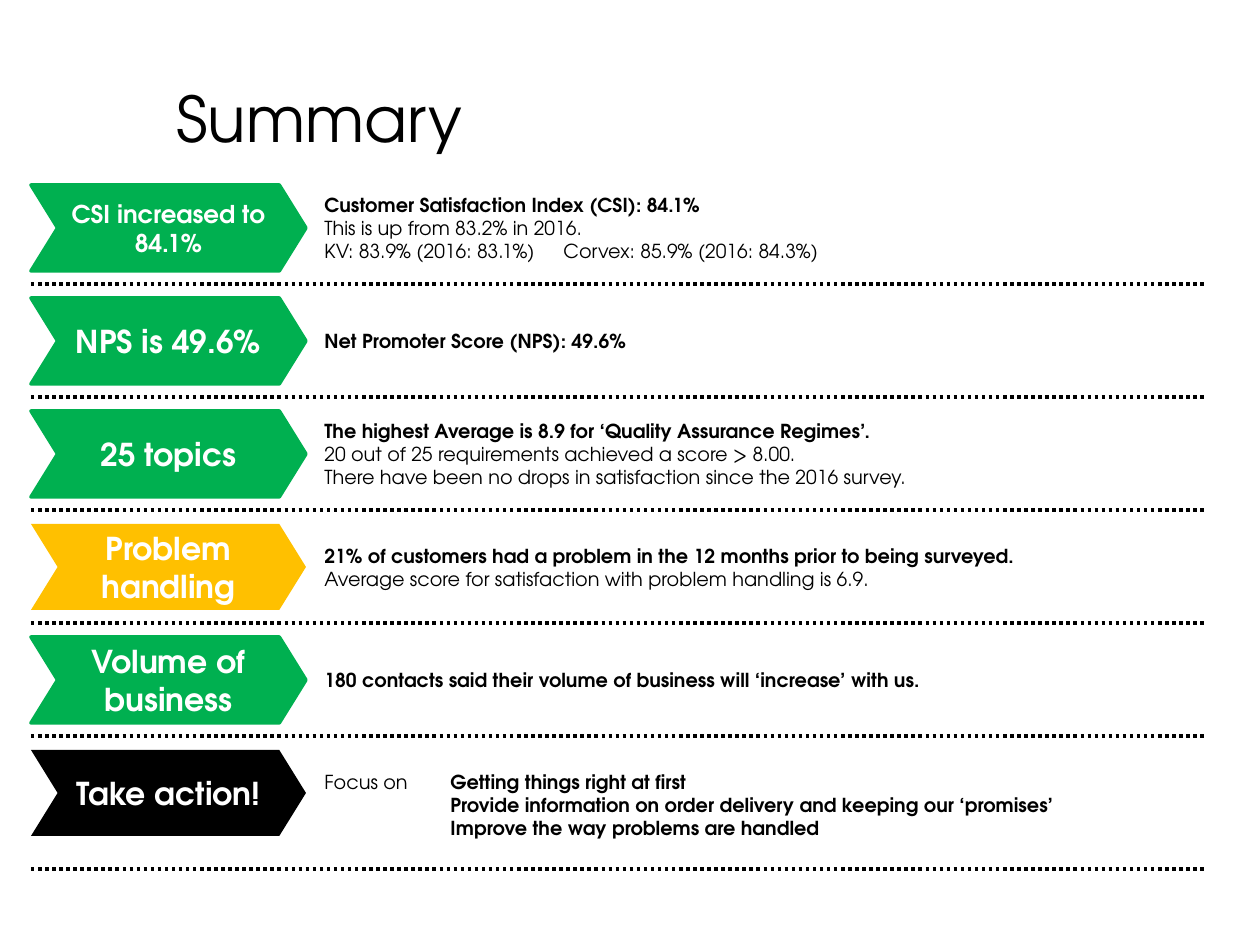
from lxml.etree import SubElement
from pptx import Presentation
from pptx.dml.color import RGBColor
from pptx.enum.dml import MSO_LINE as Dash
from pptx.enum.shapes import MSO_CONNECTOR as Conn, MSO_SHAPE as Kind
from pptx.enum.text import MSO_ANCHOR as Anchor, PP_ALIGN as Align
from pptx.oxml.ns import qn
from pptx.util import Pt

FONT = "TeX Gyre Adventor"
GREEN, AMBER, BLACK, WHITE = "00B050", "FFC000", "000000", "FFFFFF"
TOP, STEP, HIGH = 185, 113, 86
LEFT, RIGHT, BODY = 31, 1207, 312

# Label, label size, fill, text height, rule offset, tab stop, paragraphs of (text, bold) runs
ROWS = [
    ("CSI increased to 84.1%", 14, GREEN, HIGH, 99, 239, [
        [("Customer Satisfaction Index (CSI): 84.1%", True)],
        [("This is up from 83.2% in 2016.", False)],
        [("KV: 83.9% (2016: 83.1%)\tCorvex: 85.9% (2016: 84.3%)", False)]]),
    ("NPS is 49.6%", 18, GREEN, HIGH, 99, None, [
        [("Net Promoter Score (NPS): 49.6%", True)]]),
    ("25 topics", 18, GREEN, HIGH, 99, None, [
        [("The highest Average is 8.9 for ‘Quality Assurance Regimes’.", True)],
        [("20 out of 25 requirements achieved a score > 8.00.", False)],
        [("There have been no drops in satisfaction since the 2016 survey.", False)]]),
    ("Problem handling", 18, AMBER, HIGH, 99, None, [
        [("21% of customers had a problem in the 12 months prior to being surveyed.", True)],
        [("Average score for satisfaction with problem handling is 6.9.", False)]]),
    ("Volume of business", 18, GREEN, HIGH, 99, None, [
        [("180 contacts said their volume of business will ‘increase’ with us.", True)]]),
    ("Take action!", 18, BLACK, 110, 119, 126, [
        [("Focus on\t", False), ("Getting things right at first", True)],
        [("\tProvide information on order delivery and keeping our ‘promises’", True)],
        [("\tImprove the way problems are handled", True)]]),
]


def px(n):
    return round(n * 914400 / 126)


def color(code):
    return RGBColor.from_string(code)


def add_run(para, text, size, code, bold=False):
    run = para.add_run()
    run.text = text
    font = run.font
    font.name, font.size, font.bold = FONT, Pt(size), bold
    font.color.rgb = color(code)


def add_tab(para, stop):
    tabs = SubElement(para._p.get_or_add_pPr(), qn("a:tabLst"))
    SubElement(tabs, qn("a:tab"), pos=str(px(stop)), algn="l")


def add_title(slide, text):
    title = slide.shapes.title
    title.left, title.top, title.width, title.height = map(px, (164, 32, 1062, 123))
    frame = title.text_frame
    frame.vertical_anchor = Anchor.BOTTOM
    frame.margin_bottom = 0
    para = frame.paragraphs[0]
    para.alignment = Align.LEFT
    add_run(para, text, 36, BLACK)


def add_label(slide, top, text, size, fill):
    shape = slide.shapes.add_shape(Kind.CHEVRON, px(LEFT), px(top), px(275), px(HIGH))
    shape.adjustments[0] = 0.31
    shape.shadow.inherit = False
    shape.fill.solid()
    shape.fill.fore_color.rgb = color(fill)
    if fill == GREEN:
        shape.line.color.rgb = color(fill)
        shape.line.width = Pt(2)
    else:
        shape.line.fill.background()
    frame = shape.text_frame
    frame.word_wrap = True
    frame.vertical_anchor = Anchor.MIDDLE
    para = frame.paragraphs[0]
    para.alignment = Align.CENTER
    add_run(para, text, size, WHITE, True)


def add_rule(slide, y):
    rule = slide.shapes.add_connector(Conn.STRAIGHT, px(LEFT), px(y), px(RIGHT), px(y))
    rule.line.color.rgb = color(BLACK)
    rule.line.width = Pt(2)
    rule.line.dash_style = Dash.ROUND_DOT
    SubElement(rule._element.spPr, qn("a:effectLst"))


def add_body(slide, top, high, stop, paras):
    box = slide.shapes.add_textbox(px(BODY), px(top), px(893), px(high))
    frame = box.text_frame
    frame.word_wrap = True
    frame.vertical_anchor = Anchor.MIDDLE
    for i, runs in enumerate(paras):
        para = frame.add_paragraph() if i else frame.paragraphs[0]
        if stop:
            add_tab(para, stop)
        for text, bold in runs:
            add_run(para, text, 11, BLACK, bold)


def main():
    deck = Presentation()
    deck.slide_width, deck.slide_height = px(1260), px(945)
    slide = deck.slides.add_slide(deck.slide_layouts[5])
    add_title(slide, "Summary")

    # One band per finding: label, dotted rule, details
    for i, (label, size, fill, high, drop, stop, paras) in enumerate(ROWS):
        top = TOP + i * STEP
        add_label(slide, top, label, size, fill)
        add_rule(slide, top + drop)
        add_body(slide, top, high, stop, paras)

    deck.save("out.pptx")


if __name__ == "__main__":
    main()
